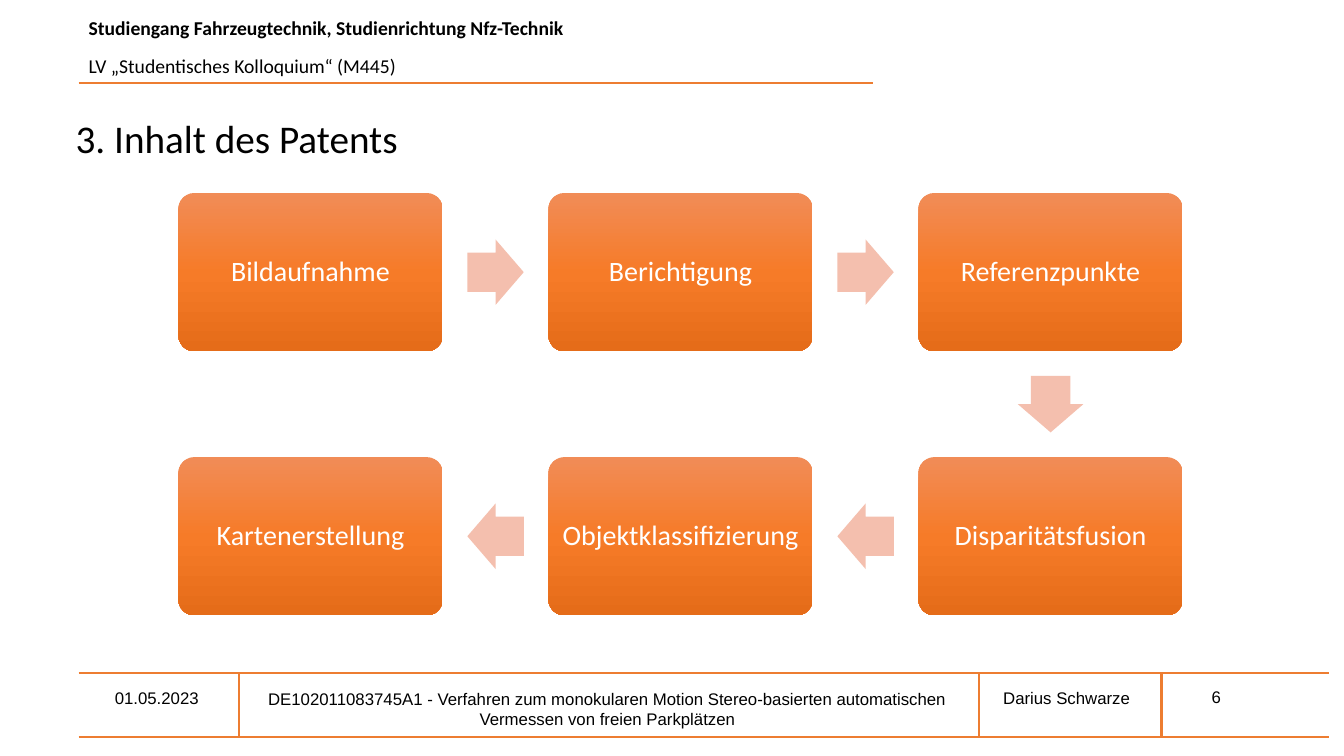
from copy import deepcopy
from dataclasses import dataclass
from itertools import pairwise

from lxml import etree
from pptx import Presentation
from pptx import util as u
from pptx.dml.color import RGBColor
from pptx.enum import shapes, text
from pptx.oxml.ns import qn

EMU_PER_PX = 9144  # 100 px to the inch


def px(length):
    return u.Emu(round(length * EMU_PER_PX))


@dataclass(frozen=True)
class Theme:
    heading_font: str = "Calibri"
    footer_font: str = "Arial"
    ink: str = "000000"
    box_text: str = "FFFFFF"
    rule: str = "ED7D31"
    arrow: str = "F4BFAE"
    box_gradient: tuple = ((0, "F18C57"), (0.5, "F67B28"), (1, "E56C19"))
    title_size: int = 28
    box_size: int = 20
    header_size: int = 14
    footer_size: int = 12
    rule_width: float = 1.5


def write(paragraph, content, *, font, size, color, bold=False,
          align=text.PP_ALIGN.LEFT, before=0, spacing=1.0):
    paragraph.text = content
    paragraph.alignment = align
    paragraph.space_before = u.Pt(before)
    paragraph.line_spacing = spacing
    paragraph.font.name = font
    paragraph.font.size = u.Pt(size)
    paragraph.font.bold = bold
    paragraph.font.color.rgb = RGBColor.from_string(color)


class SlideBuilder:
    def __init__(self, slide, theme):
        self.slide = slide
        self.theme = theme

    def title(self, content, left, top, width, height):
        shape = self.slide.shapes.title
        shape.left, shape.top = px(left), px(top)
        shape.width, shape.height = px(width), px(height)
        frame = shape.text_frame
        frame.auto_size = text.MSO_AUTO_SIZE.NONE
        frame.vertical_anchor = text.MSO_ANCHOR.TOP
        write(frame.paragraphs[0], content, font=self.theme.heading_font,
              size=self.theme.title_size, color=self.theme.ink)

    def text_frame(self, left, top, width, height, anchor=text.MSO_ANCHOR.TOP):
        """Add a wrapping text box and return its frame."""
        shape = self.slide.shapes.add_textbox(px(left), px(top), px(width), px(height))
        frame = shape.text_frame
        frame.word_wrap = True
        frame.vertical_anchor = anchor
        return frame

    def header(self, course, lecture):
        frame = self.text_frame(78, 11, 900, 51)
        style = dict(font=self.theme.heading_font, size=self.theme.header_size,
                     color=self.theme.ink)
        write(frame.paragraphs[0], course, bold=True, **style)
        write(frame.add_paragraph(), lecture, before=10, **style)

    def footer(self, content, left, top, width, height,
               align=text.PP_ALIGN.LEFT, anchor=text.MSO_ANCHOR.TOP):
        frame = self.text_frame(left, top, width, height, anchor)
        write(frame.paragraphs[0], content, font=self.theme.footer_font,
              size=self.theme.footer_size, color=self.theme.ink, align=align)

    def rule(self, x1, y1, x2, y2):
        line = self.slide.shapes.add_connector(
            shapes.MSO_CONNECTOR.STRAIGHT, px(x1), px(y1), px(x2), px(y2))
        line.line.color.rgb = RGBColor.from_string(self.theme.rule)
        line.line.width = u.Pt(self.theme.rule_width)
        etree.SubElement(line._element.spPr, qn("a:effectLst"))

    def centred_shape(self, kind, center, size):
        """Add an outline-free preset shape around a centre point."""
        (x, y), (width, height) = center, size
        shape = self.slide.shapes.add_shape(
            kind, px(x - width / 2), px(y - height / 2), px(width), px(height))
        shape.shadow.inherit = False
        shape.line.fill.background()
        return shape

    def box(self, label, center, size):
        shape = self.centred_shape(shapes.MSO_SHAPE.ROUNDED_RECTANGLE, center, size)
        shape.adjustments[0] = 0.1
        fill = shape.fill
        fill.gradient()
        fill.gradient_angle = 270
        stops = shape._element.spPr.find(qn("a:gradFill")).find(qn("a:gsLst"))
        stops.append(deepcopy(stops[0]))
        for stop, (position, color) in zip(fill.gradient_stops, self.theme.box_gradient):
            stop.position = position
            stop.color.rgb = RGBColor.from_string(color)
        frame = shape.text_frame
        frame.word_wrap = True
        frame.vertical_anchor = text.MSO_ANCHOR.MIDDLE
        frame.margin_left = frame.margin_right = px(4)
        write(frame.paragraphs[0], label, font=self.theme.heading_font,
              size=self.theme.box_size, color=self.theme.box_text,
              align=text.PP_ALIGN.CENTER, spacing=0.9)

    def arrow(self, center, rotation):
        shape = self.centred_shape(shapes.MSO_SHAPE.RIGHT_ARROW, center, (56, 65))
        shape.adjustments[0] = 0.6
        shape.adjustments[1] = 0.5
        shape.rotation = rotation
        shape.fill.solid()
        shape.fill.fore_color.rgb = RGBColor.from_string(self.theme.arrow)

    def process(self, steps, columns):
        """Lay the steps out in rows that alternate in direction."""
        centers = []
        for index, label in enumerate(steps):
            row, column = divmod(index, columns)
            if row % 2:
                column = columns - 1 - column
            center = (308 + 367 * column, 270 + 262 * row)
            centers.append(center)
            self.box(label, center, (262, 157))
        for (x1, y1), (x2, y2) in pairwise(centers):
            rotation = 90 if x1 == x2 else 0 if x2 > x1 else 180
            self.arrow(((x1 + x2) / 2, (y1 + y2) / 2), rotation)


def main():
    presentation = Presentation()
    presentation.slide_width, presentation.slide_height = px(1333), px(750)
    title_only = presentation.slide_layouts[5]
    builder = SlideBuilder(presentation.slides.add_slide(title_only), Theme())

    builder.header("Studiengang Fahrzeugtechnik, Studienrichtung Nfz-Technik",
                   "LV „Studentisches Kolloquium“ (M445)")
    builder.rule(78, 82, 866, 82)

    builder.title("3. Inhalt des Patents", 65, 108, 534, 57)
    builder.process(["Bildaufnahme", "Berichtigung", "Referenzpunkte",
                     "Disparitätsfusion", "Objektklassifizierung",
                     "Kartenerstellung"], columns=3)

    builder.footer("01.05.2023", 104, 677, 130, 30)
    builder.footer("DE102011083745A1 - Verfahren zum monokularen Motion "
                   "Stereo-basierten automatischen Vermessen von freien Parkplätzen",
                   233, 678, 739, 50, align=text.PP_ALIGN.CENTER)
    builder.footer("Darius Schwarze", 953, 672, 210, 40,
                   align=text.PP_ALIGN.CENTER, anchor=text.MSO_ANCHOR.MIDDLE)
    builder.footer("6", 1192, 676, 93, 30)
    for y in (668, 731):
        builder.rule(78, y, 1318, y)
    for x in (237, 971, 1152):
        builder.rule(x, 668, x, 731)

    presentation.save("out.pptx")


if __name__ == "__main__":
    main()
